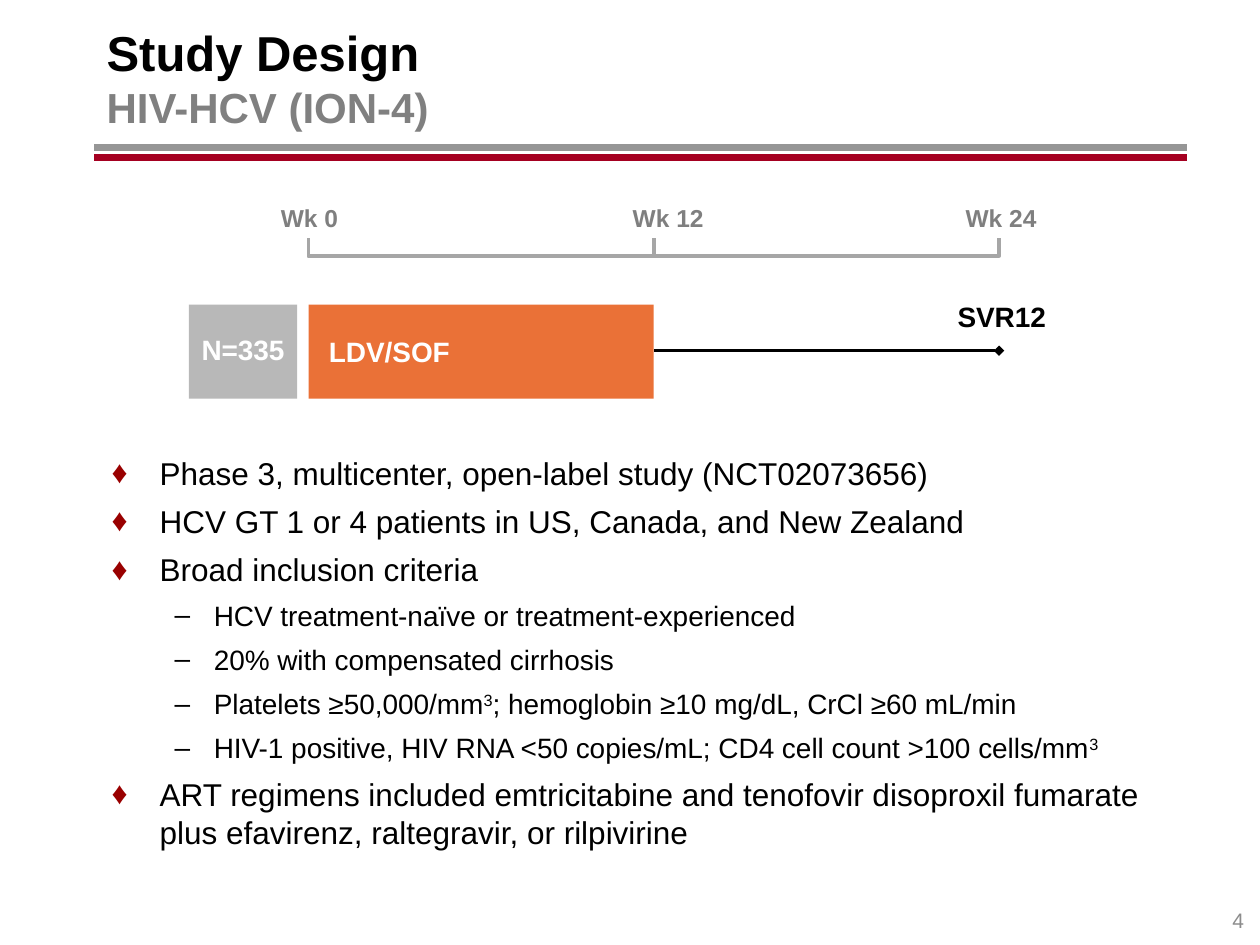
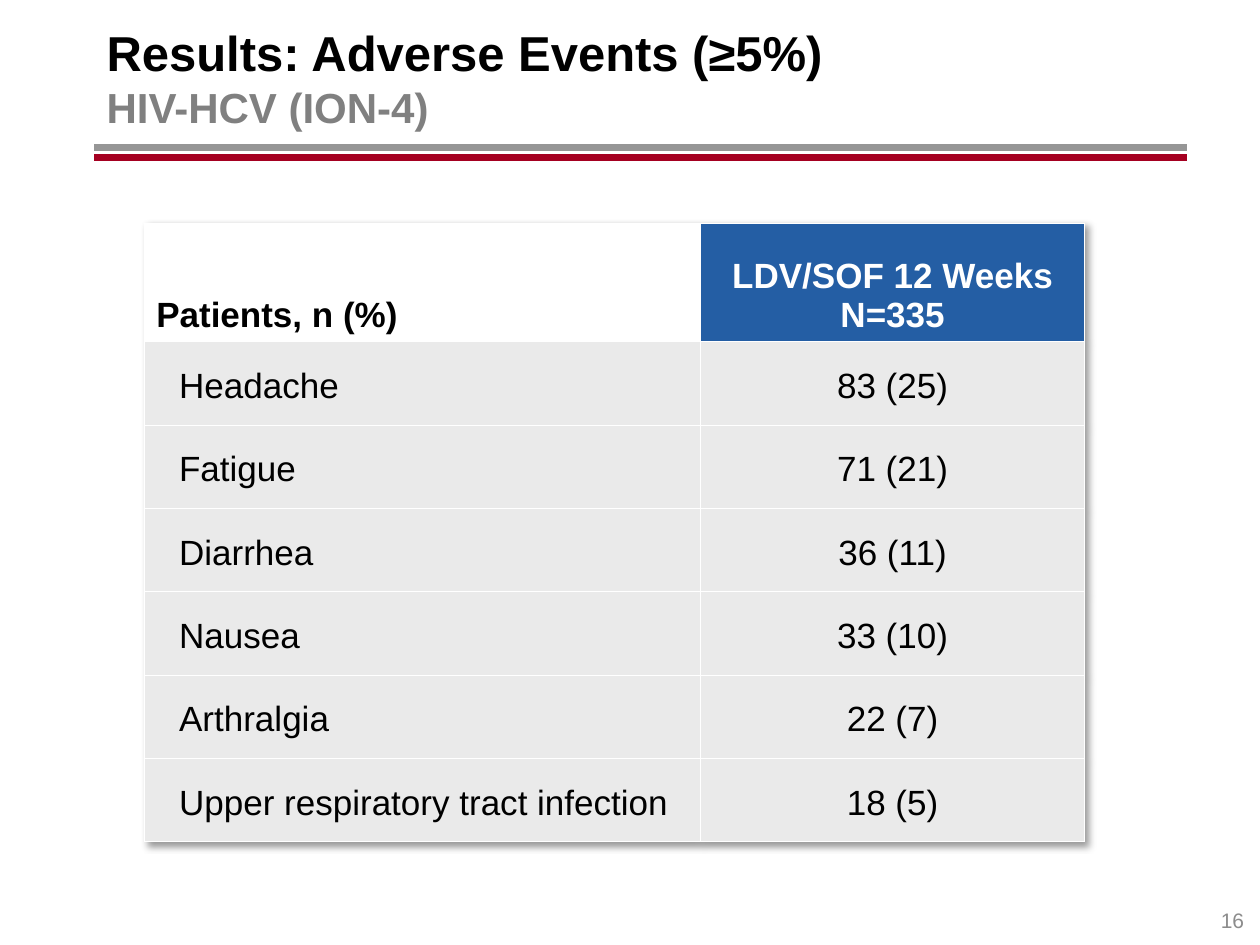
from pptx import Presentation
from pptx.dml.color import RGBColor
from pptx.enum.shapes import MSO_CONNECTOR as Link, MSO_SHAPE as Form
from pptx.enum.text import MSO_ANCHOR as Anchor, PP_ALIGN as Align
from pptx.oxml import parse_xml
from pptx.oxml.ns import nsdecls
from pptx.util import Cm, Pt

FONT = "Arial"
BLACK, WHITE, GRAY = "000000", "FFFFFF", "808080"
RULES = [(2.97, "969696"), (3.18, "A50021")]
SUB = "HIV-HCV (ION-4)"

DESIGN = ("Study Design", 4)
EVENTS = ("Results: Adverse Events (≥5%)", 16)

WEEKS = [(0, 6.24), (12, 13.47), (24, 20.18)]
POINTS = [
    (0, "Phase 3, multicenter, open-label study (NCT02073656)"),
    (0, "HCV GT 1 or 4 patients in US, Canada, and New Zealand"),
    (0, "Broad inclusion criteria"),
    (1, "HCV treatment-naïve or treatment-experienced"),
    (1, "20% with compensated cirrhosis"),
    (1, "Platelets ≥50,000/mm^3^; hemoglobin ≥10 mg/dL, CrCl ≥60 mL/min"),
    (1, "HIV-1 positive, HIV RNA <50 copies/mL; CD4 cell count >100 cells/mm^3"),
    (0, "ART regimens included emtricitabine and tenofovir disoproxil fumarate "
        "plus efavirenz, raltegravir, or rilpivirine"),
]
LEVELS = [
    dict(size=18, left=0.97, hang=0.97, mark="♦", tint="990000"),
    dict(size=16, left=2.06, hang=0.79, mark="–", tint=BLACK),
]

HEADS = ["Patients, n (%)", "LDV/SOF 12 Weeks\nN=335"]
ROWS = [
    ("Headache", "83 (25)"),
    ("Fatigue", "71 (21)"),
    ("Diarrhea", "36 (11)"),
    ("Nausea", "33 (10)"),
    ("Arthralgia", "22 (7)"),
    ("Upper respiratory tract infection", "18 (5)"),
]


def color(code):
    return RGBColor.from_string(code)


def node(tag, attrs="", inner=""):
    return parse_xml(f"<a:{tag} {nsdecls('a')} {attrs}>{inner}</a:{tag}>")


def solid(code):
    return f'<a:solidFill><a:srgbClr val="{code}"/></a:solidFill>'


def write(frame, text, size=16, ink=BLACK, bold=False, align=Align.LEFT, para=None,
          before=0, after=0, space=None, left=0, hang=0, mark=None, tint=BLACK):
    if para is None:
        para = frame.paragraphs[0]
        if para.runs:
            para = frame.add_paragraph()
    para.alignment = align
    para.space_before, para.space_after = Pt(before), Pt(after)
    if space:
        para.line_spacing = space
    props = para._p.get_or_add_pPr()
    props.set("marL", str(Cm(left)))
    props.set("indent", str(-Cm(hang)))
    if mark:
        props.append(node("buClr", "", f'<a:srgbClr val="{tint}"/>'))
        props.append(node("buFont", f'typeface="{FONT}"'))
        props.append(node("buChar", f'char="{mark}"'))
    for row, line in enumerate(text.split("\n")):
        if row:
            para.add_line_break()
        for part, bit in enumerate(line.split("^")):
            if not bit:
                continue
            run = para.add_run()
            run.text = bit
            font = run.font
            font.name, font.size, font.bold = FONT, Pt(size), bold
            font.color.rgb = color(ink)
            if part % 2:
                run._r.get_or_add_rPr().set("baseline", "30000")
    return para


def box(slide, x, y, wide, high, anchor=Anchor.TOP, wrap=True):
    area = slide.shapes.add_textbox(Cm(x), Cm(y), Cm(wide), Cm(high))
    frame = area.text_frame
    frame.word_wrap, frame.vertical_anchor = wrap, anchor
    return frame


def block(slide, x, y, wide, high, fill, wrap=True):
    shape = slide.shapes.add_shape(Form.RECTANGLE, Cm(x), Cm(y), Cm(wide), Cm(high))
    shape.shadow.inherit = False
    shape.fill.solid()
    shape.fill.fore_color.rgb = color(fill)
    shape.line.fill.background()
    frame = shape.text_frame
    frame.word_wrap, frame.vertical_anchor = wrap, Anchor.MIDDLE
    return frame


def rule(slide, x, end, y, ink, width):
    line = slide.shapes.add_connector(Link.STRAIGHT, Cm(x), Cm(y), Cm(end), Cm(y))
    line.line.color.rgb = color(ink)
    line.line.width = Pt(width)
    line._element.spPr.append(node("effectLst"))
    return line


def start(deck, title, number):
    slide = deck.slides.add_slide(deck.slide_layouts[6])
    for y, ink in RULES:
        rule(slide, 1.9, 23.93, y, ink, 4.25)
    frame = box(slide, 1.9, 0.46, 22.02, 2.18, Anchor.MIDDLE)
    para = write(frame, title + "\n", size=28, bold=True)
    write(frame, SUB, size=24, ink=GRAY, bold=True, para=para)
    frame = box(slide, 19.41, 18.03, 5.92, 1.02, Anchor.MIDDLE)
    write(frame, str(number), size=12, ink="8C8C8C", align=Align.RIGHT)
    return slide


def scale(slide, zero, step):
    top, base = 4.8, 5.16
    for week, mid in WEEKS:
        frame = box(slide, mid - 1.41, 3.96, 2.82, 0.84)
        write(frame, f"Wk {week}", size=14, ink="7F7F7F", bold=True, align=Align.CENTER)
        if week:
            end = zero + step * week / 12
            path = slide.shapes.build_freeform(Cm(end), Cm(top))
            turns = [(end, base), (zero, base), (zero, top)]
            path.add_line_segments([(Cm(x), Cm(y)) for x, y in turns], close=False)
            shape = path.convert_to_shape()
            shape.shadow.inherit = False
            shape.fill.background()
            shape.line.color.rgb = color("A6A6A6")
            shape.line.width = Pt(2)


def design(deck):
    slide = start(deck, *DESIGN)
    frame = box(slide, 2, 9.02, 21.39, 7.95)
    for level, text in POINTS:
        write(frame, text, before=6, **LEVELS[level])

    zero, step, top, high = 6.22, 6.96, 6.14, 1.9
    arm = rule(slide, zero + step, zero + 2 * step, 7.07, BLACK, 1.5)
    arm.line._get_or_add_ln().append(node("tailEnd", 'type="diamond"'))
    scale(slide, zero, step)
    frame = box(slide, 18.9, 6, 2.59, 0.76, Anchor.MIDDLE, wrap=False)
    write(frame, "SVR12", bold=True, align=Align.CENTER)
    frame = block(slide, zero, top, step, high, "EA7137")
    frame.margin_left = Cm(0.41)
    write(frame, "LDV/SOF", ink=WHITE, bold=True)
    frame = block(slide, 3.81, top, 2.18, high, "B8B8B8", wrap=False)
    write(frame, "N=335", ink=WHITE, bold=True, align=Align.CENTER, space=0.9)


def paint(cell, fill, anchor, side, edge):
    props = cell._tc.get_or_add_tcPr()
    for tag in ("lnL", "lnR", "lnT", "lnB"):
        props.append(node(tag, f'w="{Pt(0.75)}"', solid(WHITE)))
    cell.fill.solid()
    cell.fill.fore_color.rgb = color(fill)
    cell.vertical_anchor = anchor
    cell.margin_left = cell.margin_right = Cm(side)
    cell.margin_top = cell.margin_bottom = Cm(edge)


def events(deck):
    slide = start(deck, *EVENTS)
    wides, highs = [11.2, 7.75], [2.39] + [1.68] * len(ROWS)
    grid = slide.shapes.add_table(len(highs), len(wides), Cm(2.92), Cm(4.5),
                                  Cm(sum(wides)), Cm(sum(highs))).table
    shade = ('<a:outerShdw blurRad="50800" dist="38100" dir="2700000" algn="tl">'
             '<a:srgbClr val="000000"><a:alpha val="40000"/></a:srgbClr></a:outerShdw>')
    grid._tbl.tblPr.insert(0, node("effectLst", "", shade))
    for col, wide in zip(grid.columns, wides):
        col.width = Cm(wide)
    for row, high in zip(grid.rows, highs):
        row.height = Cm(high)

    looks = [(WHITE, BLACK, Align.LEFT), ("245EA4", WHITE, Align.CENTER)]
    for col, (text, (fill, ink, align)) in enumerate(zip(HEADS, looks)):
        cell = grid.cell(0, col)
        paint(cell, fill, Anchor.BOTTOM, 0.23, 0.13)
        write(cell.text_frame, text, size=20, ink=ink, bold=True, align=align)
    forms = [dict(left=0.51, before=2, after=2), dict(align=Align.CENTER)]
    for row, texts in enumerate(ROWS, 1):
        for col, text in enumerate(texts):
            cell = grid.cell(row, col)
            paint(cell, "EAEAEA", Anchor.MIDDLE, 0.18, 0)
            write(cell.text_frame, text, size=20, space=1.15, **forms[col])


def main():
    deck = Presentation()
    deck.slide_width, deck.slide_height = Cm(25.4), Cm(19.05)
    design(deck)
    events(deck)
    deck.save("out.pptx")


if __name__ == "__main__":
    main()
